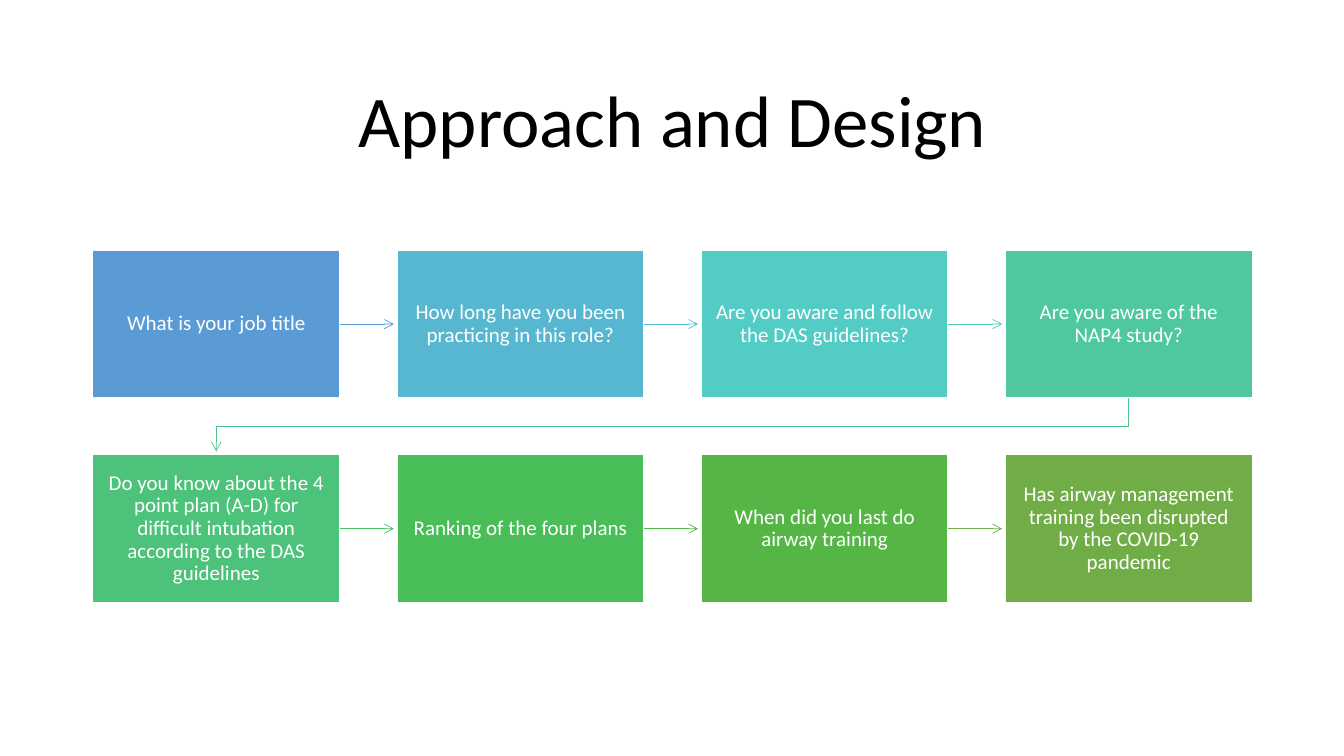
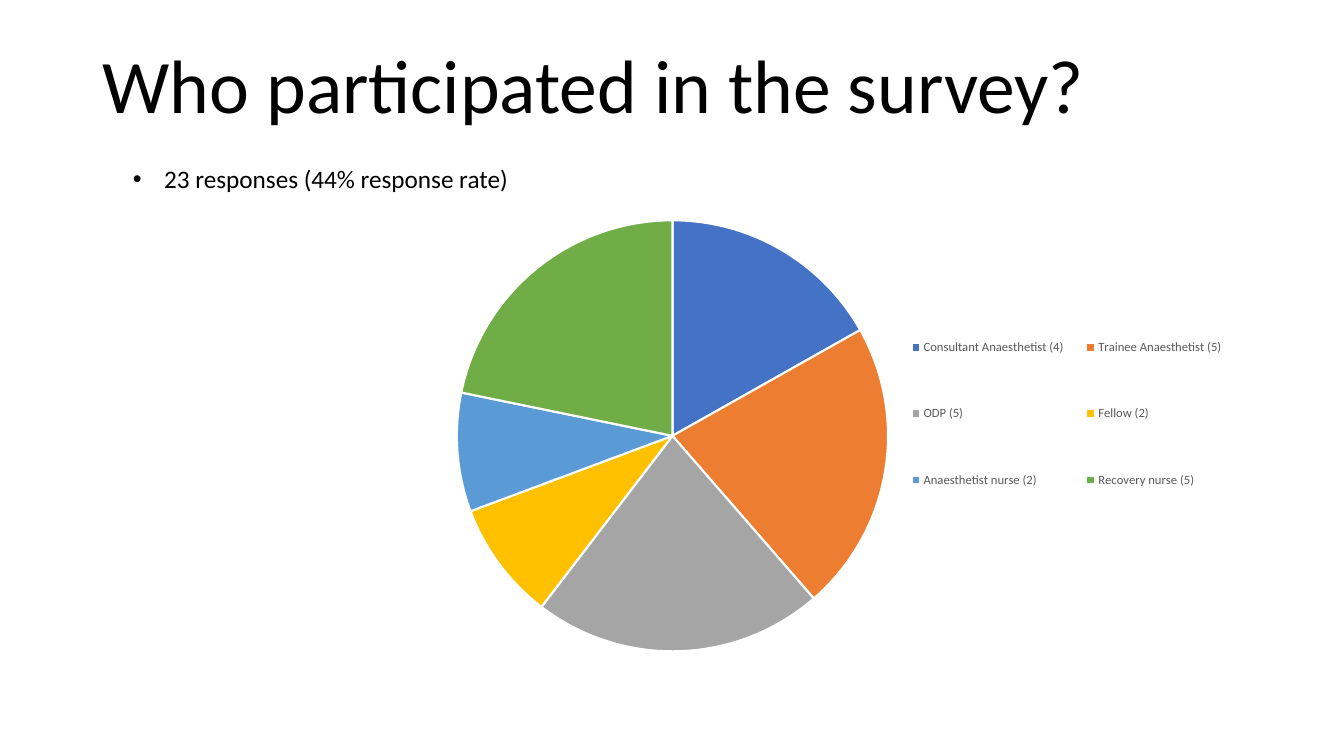
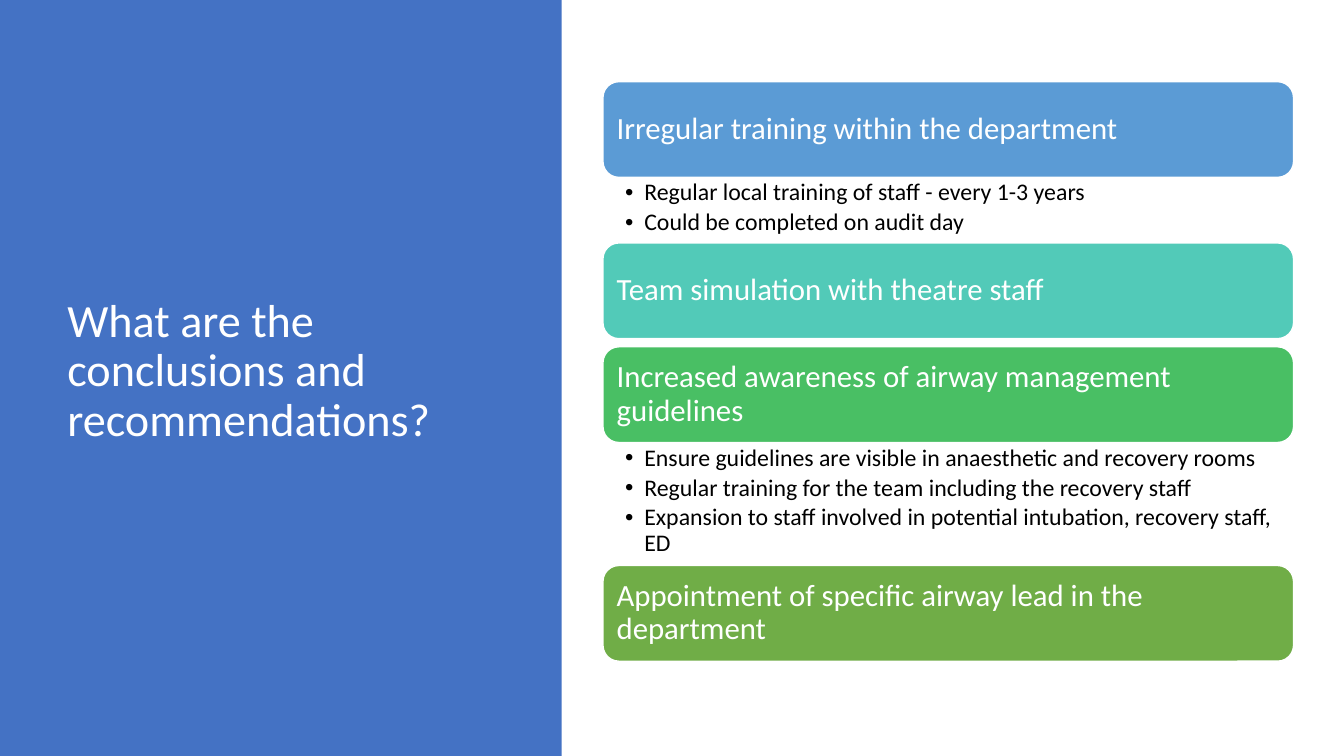
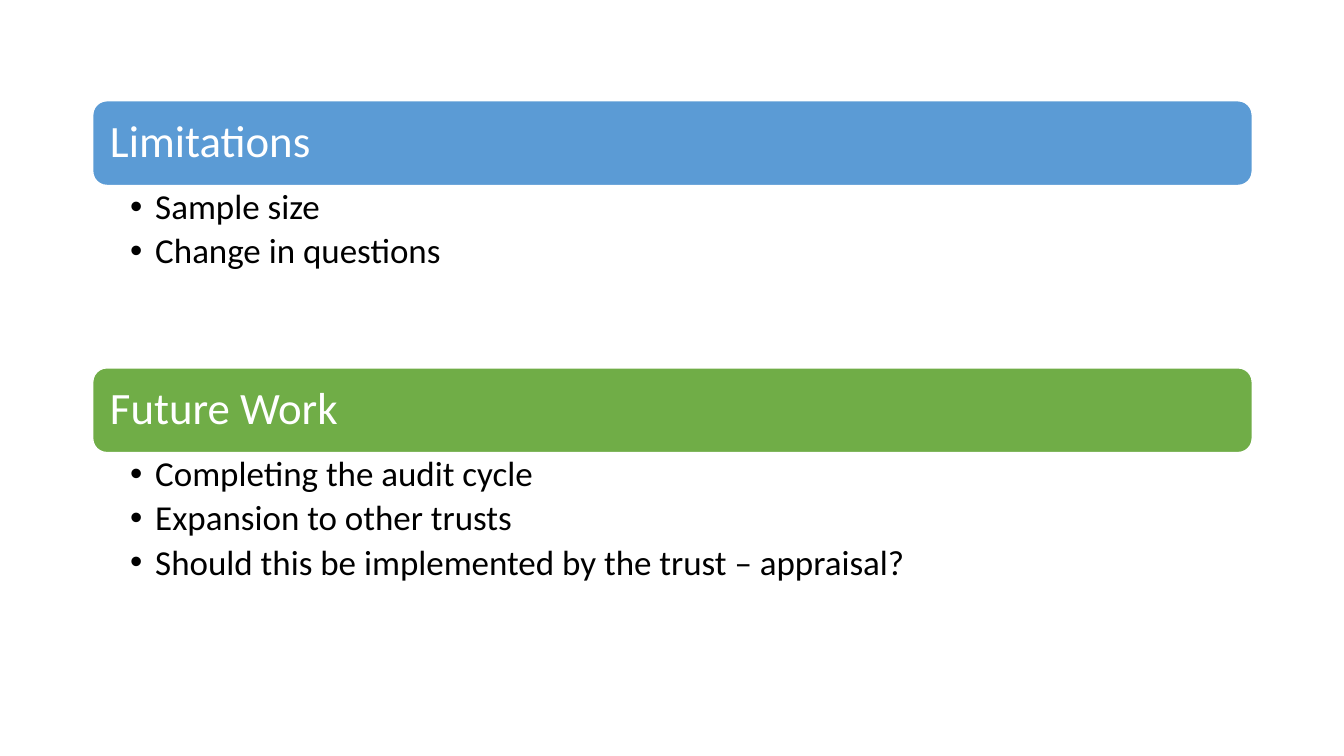
from dataclasses import dataclass

from lxml import etree
from pptx import Presentation
from pptx.chart.data import CategoryChartData
from pptx.dml.color import RGBColor
from pptx.enum import chart as kinds, shapes, text
from pptx.oxml import parse_xml
from pptx.oxml.ns import nsdecls, qn
from pptx.util import Inches, Pt

WIDE, HIGH = 13.33, 7.5
EDGE, SPAN = 0.92, 11.5
FONT = "Calibri"
WHITE, BLACK, GREY = "FFFFFF", "000000", "595959"
BLUE, SKY, GREEN = "4472C4", "5B9BD5", "70AD47"
LEFT, MID = text.PP_ALIGN.LEFT, text.PP_ALIGN.CENTER
TOP, CENTRE, BASE = (text.MSO_ANCHOR.TOP, text.MSO_ANCHOR.MIDDLE,
                     text.MSO_ANCHOR.BOTTOM)
RECT, ROUND = shapes.MSO_SHAPE.RECTANGLE, shapes.MSO_SHAPE.ROUNDED_RECTANGLE


@dataclass
class Box:
    left: float
    top: float
    width: float
    height: float

    def emu(self) -> list:
        return [Inches(n) for n in
                (self.left, self.top, self.width, self.height)]


@dataclass
class Style:
    size: float
    color: str = BLACK
    align: int = LEFT
    anchor: int = TOP
    inset: tuple = (0.1, 0.05, 0.1, 0.05)
    line: float = 0.9
    after: float = 0
    hang: float = 0


@dataclass
class Step:
    label: str
    fill: str
    arrow: str = ""


@dataclass
class Part:
    """A heading bar, the room below it and the bullets in that room."""
    head: str
    fill: str
    room: float = 0
    items: tuple = ()


@dataclass
class Stack:
    left: float
    top: float
    width: float
    bar: float
    head: Style
    body: Style


def rgb(color: str) -> RGBColor:
    return RGBColor.from_string(color)


def write(shape, lines: tuple, style: Style) -> None:
    frame = shape.text_frame
    frame.word_wrap = True
    frame.vertical_anchor = style.anchor
    (frame.margin_left, frame.margin_top, frame.margin_right,
     frame.margin_bottom) = [Inches(n) for n in style.inset]
    frame.text = "\n".join(lines)
    for para in frame.paragraphs:
        if style.hang:
            props = para._p.get_or_add_pPr()
            props.set("marL", str(Inches(style.hang)))
            props.set("indent", str(-Inches(style.hang)))
            etree.SubElement(props, qn("a:buFont"), typeface="Arial")
            etree.SubElement(props, qn("a:buChar"), char="•")
        para.alignment = style.align
        para.line_spacing = style.line
        para.space_after = Pt(style.after)
        for run in para.runs:
            run.font.name = FONT
            run.font.size = Pt(style.size)
            run.font.color.rgb = rgb(style.color)


def label(slide, box: Box, lines: tuple, style: Style) -> None:
    write(slide.shapes.add_textbox(*box.emu()), lines, style)


def panel(slide, kind: int, box: Box, fill: str, edge: str = ""):
    shape = slide.shapes.add_shape(kind, *box.emu())
    shape.shadow.inherit = False
    shape.fill.solid()
    shape.fill.fore_color.rgb = rgb(fill)
    if edge:
        shape.line.color.rgb = rgb(edge)
        shape.line.width = Pt(1)
    else:
        shape.line.fill.background()
    return shape


def arrow(slide, points: list, color: str) -> None:
    """Draw a straight connector, or an open bent line for more points."""
    spots = [(Inches(x), Inches(y)) for x, y in points]
    if len(spots) == 2:
        line = slide.shapes.add_connector(
            shapes.MSO_CONNECTOR.STRAIGHT, *spots[0], *spots[1])
        etree.SubElement(line._element.spPr, qn("a:effectLst"))
    else:
        path = slide.shapes.build_freeform(*spots[0])
        path.add_line_segments(spots[1:], close=False)
        line = path.convert_to_shape()
        line.shadow.inherit = False
        line.fill.background()
    line.line.color.rgb = rgb(color)
    line.line.width = Pt(0.5)
    etree.SubElement(line.line._get_or_add_ln(), qn("a:tailEnd"), type="arrow")


def flow(slide, steps: list) -> None:
    cols, wide, high, first, pitch, gap = 4, 2.45, 1.47, 2.48, 2.03, 0.03
    stride = (SPAN - wide) / (cols - 1)
    style = Style(15, WHITE, MID, CENTRE, (0.12, 0.13, 0.12, 0.13))
    for index, step in enumerate(steps):
        row, col = divmod(index, cols)
        box = Box(EDGE + col * stride, first + row * pitch, wide, high)
        write(panel(slide, RECT, box, step.fill, WHITE), (step.label,), style)
        if not step.arrow:
            continue
        if col < cols - 1:
            mid = box.top + high / 2
            points = [(box.left + wide, mid), (box.left + stride - gap, mid)]
        else:
            start, end = box.left + wide / 2, EDGE + wide / 2
            foot, below = box.top + high, box.top + pitch
            turn = (foot + below) / 2
            points = [(start, foot), (start, turn), (end, turn),
                      (end, below - gap)]
        arrow(slide, points, step.arrow)


def pile(slide, stack: Stack, parts: list) -> None:
    top = stack.top
    for part in parts:
        bar = Box(stack.left, top, stack.width, stack.bar)
        write(panel(slide, ROUND, bar, part.fill, WHITE),
              (part.head,), stack.head)
        top += stack.bar
        if part.items:
            room = Box(stack.left, top, stack.width, part.room)
            label(slide, room, part.items, stack.body)
        top += part.room


def layout(share: Box, inner: bool = False):
    """Place a chart part by shares of the chart's size."""
    target = '<c:layoutTarget val="inner"/>' if inner else ""
    return parse_xml(
        f'<c:layout {nsdecls("c")}><c:manualLayout>{target}'
        '<c:xMode val="edge"/><c:yMode val="edge"/>'
        f'<c:x val="{share.left}"/><c:y val="{share.top}"/>'
        f'<c:w val="{share.width}"/><c:h val="{share.height}"/>'
        '</c:manualLayout></c:layout>')


def pie(slide, box: Box, slices: list) -> None:
    data = CategoryChartData()
    data.categories = [name for name, _, _ in slices]
    data.add_series("Series 1", [value for _, value, _ in slices])
    chart = slide.shapes.add_chart(
        kinds.XL_CHART_TYPE.PIE, *box.emu(), data).chart
    chart.has_title = False
    chart.font.name, chart.font.size = FONT, Pt(10)
    chart.font.color.rgb = rgb(BLACK)
    plot = chart.plots[0]
    plot.vary_by_categories = True
    for index, (_, _, color) in enumerate(slices):
        form = plot.series[0].points[index].format
        form.fill.solid()
        form.fill.fore_color.rgb = rgb(color)
        form.line.color.rgb = rgb(WHITE)
        form.line.width = Pt(1.5)
    chart.has_legend = True
    legend = chart.legend
    legend.position = kinds.XL_LEGEND_POSITION.BOTTOM
    legend.include_in_layout = False
    legend.font.name, legend.font.size = FONT, Pt(9)
    legend.font.color.rgb = rgb(GREY)
    area = chart._chartSpace.chart.plotArea
    for old in area.findall(qn("c:layout")):
        area.remove(old)
    area.insert(0, layout(Box(0.31, 0.03, 0.38, 0.88), inner=True))
    key = legend._element
    for old in key.findall(qn("c:layout")):
        key.remove(old)
    key.find(qn("c:legendPos")).addnext(layout(Box(0.69, 0.17, 0.3, 0.51)))


def design(slide) -> None:
    label(slide, Box(EDGE, 0.61, SPAN, 1.24), ("Approach and Design",),
          Style(52, align=MID, anchor=CENTRE))
    flow(slide, [
        Step("What is your job title", SKY, SKY),
        Step("How long have you been practicing in this role?",
             "57B7D1", "56BCD0"),
        Step("Are you aware and follow the DAS guidelines?",
             "53CCC5", "52CAB8"),
        Step("Are you aware of the NAP4 study?", "4FC7A0", "4DC58D"),
        Step("Do you know about the 4 point plan (A-D) for difficult "
             "intubation according to the DAS guidelines",
             "4CC27B", "49BF64"),
        Step("Ranking of the four plans", "48BD58", "50B846"),
        Step("When did you last do airway training", "55B646", GREEN),
        Step("Has airway management training been disrupted by the "
             "COVID-19 pandemic", GREEN),
    ])


def survey(slide) -> None:
    label(slide, Box(EDGE, 0.32, SPAN, 1.02),
          ("Who participated in the survey?",), Style(54, anchor=BASE))
    pie(slide, Box(EDGE, 2.04, SPAN, 4.86), [
        ("Consultant Anaesthetist (4)", 17, BLUE),
        ("Trainee Anaesthetist (5)", 22, "ED7D31"),
        ("ODP (5)", 22, "A5A5A5"),
        ("Fellow (2)", 9, "FFC000"),
        ("Anaesthetist nurse (2)", 9, SKY),
        ("Recovery nurse (5)", 22, GREEN),
    ])
    label(slide, Box(1.22, 1.57, 4.5, 0.4),
          ("23 responses (44% response rate)",),
          Style(18, line=1, hang=0.31))


def advice(slide) -> None:
    panel(slide, RECT, Box(0, 0, 5.57, HIGH), BLUE)
    label(slide, Box(0.57, 0.68, 4.16, 6.02),
          ("What are the conclusions and recommendations?",),
          Style(33, WHITE, anchor=CENTRE))
    stack = Stack(5.98, 0.81, 6.85, 0.95,
                  Style(22, WHITE, anchor=CENTRE, inset=(0.09,) * 4),
                  Style(17, inset=(0.22, 0.03, 0.17, 0.03),
                        after=3, hang=0.19))
    pile(slide, stack, [
        Part("Irregular training within the department", SKY, 0.65,
             ("Regular local training of staff - every 1-3 years",
              "Could be completed on audit day")),
        Part("Team simulation with theatre staff", "52CAB8", 0.08),
        Part("Increased awareness of airway management guidelines",
             "49BF64", 1.22,
             ("Ensure guidelines are visible in anaesthetic and "
              "recovery rooms",
              "Regular training for the team including the recovery staff",
              "Expansion to staff involved in potential intubation, "
              "recovery staff, ED")),
        Part("Appointment of specific airway lead in the department", GREEN),
    ])


def outlook(slide) -> None:
    stack = Stack(EDGE, 1, SPAN, 0.84,
                  Style(32, WHITE, anchor=CENTRE, inset=(0.13,) * 4),
                  Style(25, inset=(0.37, 0.04, 0.25, 0.04),
                        after=4.5, hang=0.25))
    pile(slide, stack, [
        Part("Limitations", SKY, 1.81, ("Sample size", "Change in questions")),
        Part("Future Work", GREEN, 2.17,
             ("Completing the audit cycle", "Expansion to other trusts",
              "Should this be implemented by the trust – appraisal?")),
    ])


def main() -> None:
    deck = Presentation()
    deck.slide_width, deck.slide_height = Inches(WIDE), Inches(HIGH)
    for draw in (design, survey, advice, outlook):
        draw(deck.slides.add_slide(deck.slide_layouts[6]))
    deck.save("out.pptx")


if __name__ == "__main__":
    main()
